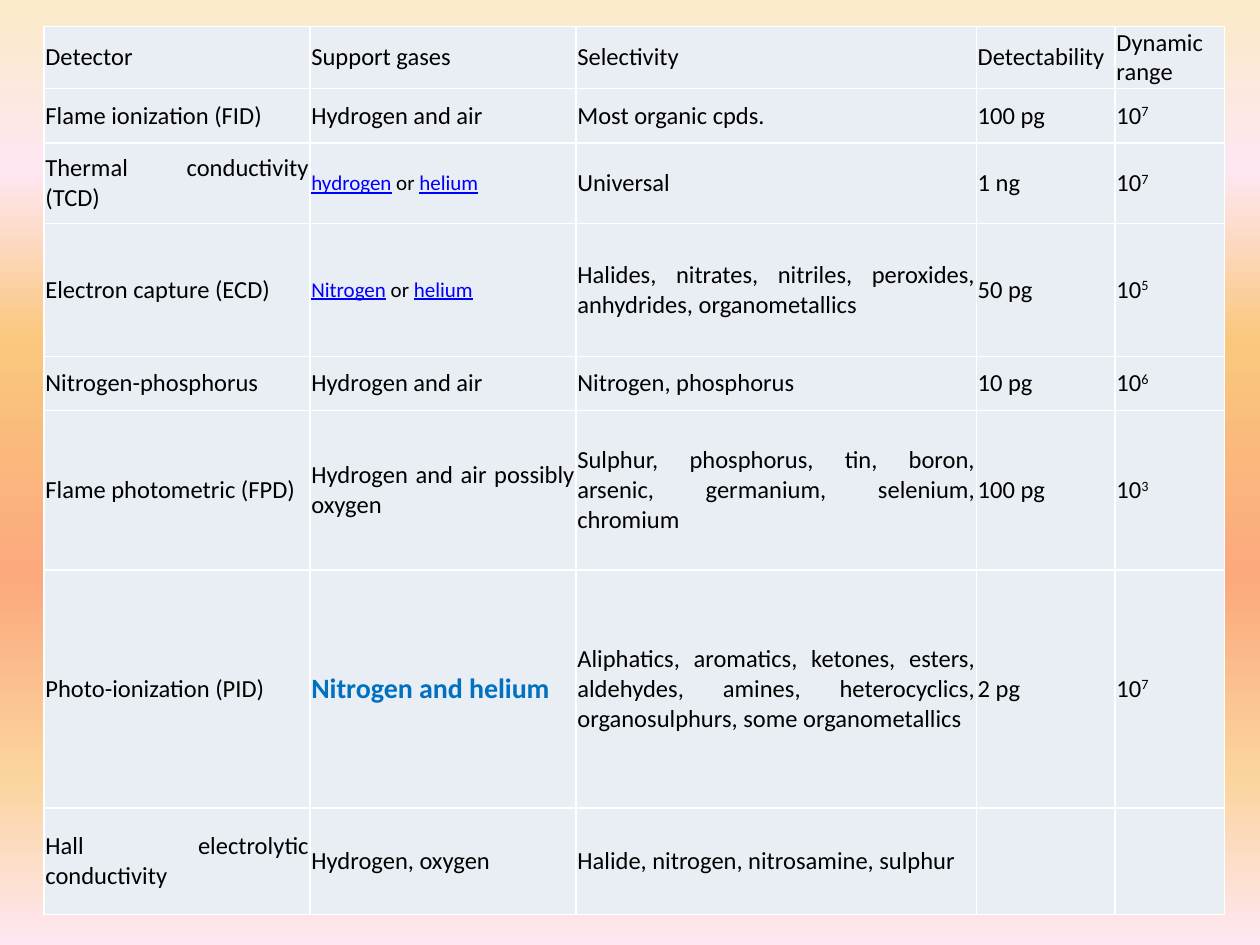
from dataclasses import dataclass
from typing import Optional

from lxml import etree
from pptx import Presentation
from pptx.dml.color import RGBColor
from pptx.enum.text import MSO_ANCHOR, PP_ALIGN
from pptx.oxml.ns import qn
from pptx.util import Pt

JUSTIFY = PP_ALIGN.JUSTIFY
MIDDLE = MSO_ANCHOR.MIDDLE
FONT = "Calibri"
COLORS = {"text": "000000", "link": "0000FF", "accent": "0070C0",
          "cell": "E9EDF4", "border": "FFFFFF"}
BACKGROUND_STOPS = [(0, "FBEAC7"), (18, "FEE7F2"), (36, "FAC77D"),
                    (61, "FBA97D"), (82, "FBD49C"), (100, "FEE7F2")]
COL_WIDTHS = [152, 152, 228.8, 79.3, 62.4]
ROW_HEIGHTS = [31, 31, 46, 76, 31, 91, 136, 61]


@dataclass
class Span:
    text: str
    color: Optional[str] = None
    underline: Optional[bool] = None
    superscript: bool = False


@dataclass
class Entry:
    spans: list[Span]
    size: float = 14
    color: str = "text"
    bold: bool = False


def plain(text: str) -> Entry:
    return Entry([Span(text)] if text else [])


def power(exponent: str) -> Entry:
    return Entry([Span("10"), Span(exponent, superscript=True)])


def gas_choice(first: str, second: str) -> Entry:
    return Entry([Span(first, "link", True), Span(" or "),
                  Span(second, "link", True)], size=12)


HEADERS = ["Detector", "Support gases", "Selectivity", "Detectability",
           "Dynamic range"]
DETECTORS = [
    ("Flame ionization (FID)", "Hydrogen and air", "Most organic cpds.",
     "100 pg", power("7")),
    ("Thermal conductivity (TCD)", gas_choice("hydrogen", "helium"),
     "Universal", "1 ng", power("7")),
    ("Electron capture (ECD)", gas_choice("Nitrogen", "helium"),
     "Halides, nitrates, nitriles, peroxides, anhydrides, organometallics",
     "50 pg", power("5")),
    ("Nitrogen-phosphorus", "Hydrogen and air", "Nitrogen, phosphorus",
     "10 pg", power("6")),
    ("Flame photometric (FPD)", "Hydrogen and air possibly oxygen",
     "Sulphur, phosphorus, tin, boron, arsenic, germanium, selenium, chromium",
     "100 pg", power("3")),
    ("Photo-ionization (PID)",
     Entry([Span("Nitrogen and helium")], 16, "accent", True),
     "Aliphatics, aromatics, ketones, esters, aldehydes, amines, "
     "heterocyclics, organosulphurs, some organometallics",
     "2 pg", power("7")),
    ("Hall electrolytic conductivity", "Hydrogen, oxygen",
     "Halide, nitrogen, nitrosamine, sulphur", "", ""),
]


def rgb(name: str) -> RGBColor:
    return RGBColor.from_string(COLORS[name])


def paint_background(slide) -> None:
    fill = slide.background.fill
    fill.gradient()
    grad = next(slide.element.iter(qn("a:gradFill")))
    stops = grad.find(qn("a:gsLst"))
    for stop in list(stops):
        stops.remove(stop)
    for position, color in BACKGROUND_STOPS:
        stop = etree.SubElement(stops, qn("a:gs"), pos=str(position * 1000))
        etree.SubElement(stop, qn("a:srgbClr"), val=color)
    fill.gradient_angle = 270  # counter-clockwise: top to bottom


def add_borders(cell) -> None:
    tcPr = cell._tc.get_or_add_tcPr()
    for side in ("a:lnL", "a:lnR", "a:lnT", "a:lnB"):
        line = etree.SubElement(tcPr, qn(side), w=str(Pt(1)))
        solid = etree.SubElement(line, qn("a:solidFill"))
        etree.SubElement(solid, qn("a:srgbClr"), val=COLORS["border"])


def fill_cell(cell, entry: Entry) -> None:
    add_borders(cell)
    cell.fill.solid()
    cell.fill.fore_color.rgb = rgb("cell")
    cell.vertical_anchor = MIDDLE
    cell.margin_left = cell.margin_right = Pt(0.75)
    cell.margin_top = cell.margin_bottom = Pt(0.75)
    p = cell.text_frame.paragraphs[0]
    p.alignment = JUSTIFY
    p.font.name = FONT
    p.font.size = Pt(entry.size)
    p.font.bold = entry.bold
    p.font.color.rgb = rgb(entry.color)
    for span in entry.spans:
        r = p.add_run()
        r.text = span.text
        if span.color:
            r.font.color.rgb = rgb(span.color)
        if span.underline:
            r.font.underline = True
        if span.superscript:
            r.font._element.set("baseline", "30000")


def add_detector_table(slide) -> None:
    rows = [HEADERS, *DETECTORS]
    table = slide.shapes.add_table(
        len(rows), len(HEADERS), Pt(25.2), Pt(15.1),
        Pt(sum(COL_WIDTHS)), Pt(sum(ROW_HEIGHTS))).table
    table.first_row = table.horz_banding = False
    for column, width in zip(table.columns, COL_WIDTHS):
        column.width = Pt(width)
    for row, height, values in zip(table.rows, ROW_HEIGHTS, rows):
        row.height = Pt(height)
        for cell, value in zip(row.cells, values):
            fill_cell(cell, plain(value) if isinstance(value, str) else value)


def main() -> None:
    prs = Presentation()
    prs.slide_width, prs.slide_height = Pt(720), Pt(540)
    slide = prs.slides.add_slide(prs.slide_layouts[6])  # blank
    paint_background(slide)
    add_detector_table(slide)
    prs.save("out.pptx")


if __name__ == "__main__":
    main()
